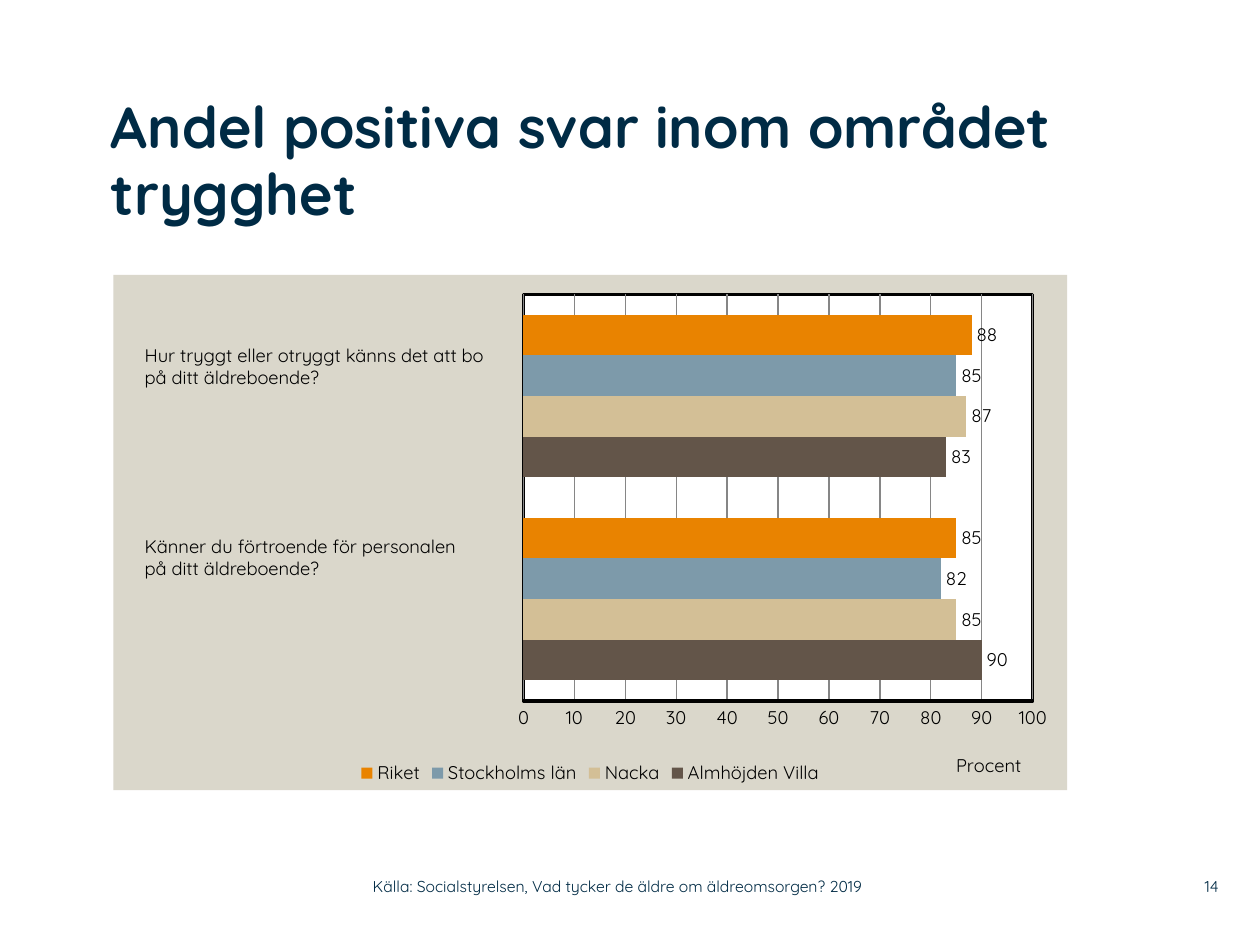
import pptx
import pptx.chart.data
import pptx.dml.color
import pptx.enum.chart
import pptx.enum.text
import pptx.util
from lxml import etree
from pptx.util import Pt

FONT = "Quicksand"
NAVY = "002B45"
BLACK = "000000"


def style_font(font, size, color, bold=False):
    font.name = FONT
    font.size = Pt(size)
    font.bold = bold
    font.color.rgb = pptx.dml.color.RGBColor.from_string(color)


def add_layout(parent, successors, **values):
    """Place a chart part by hand, in fractions of the chart area."""
    qn = pptx.oxml.ns.qn
    for old in parent.findall(qn("c:layout")):
        parent.remove(old)
    layout = etree.Element(qn("c:layout"))
    manual = etree.SubElement(layout, qn("c:manualLayout"))
    for name, value in values.items():
        etree.SubElement(manual, qn("c:" + name)).set("val", str(value))
    following = [child for child in parent if child.tag in [qn(s) for s in successors]]
    following[0].addprevious(layout)


presentation = pptx.Presentation()
presentation.slide_width = Pt(720)
presentation.slide_height = Pt(540)
slide = presentation.slides.add_slide(presentation.slide_layouts[5])
rgb = pptx.dml.color.RGBColor.from_string

# Title
title = slide.shapes.title
title.left, title.top, title.width, title.height = Pt(63.4), Pt(54), Pt(547), Pt(102)
frame = title.text_frame
frame.word_wrap = True
frame.auto_size = pptx.enum.text.MSO_AUTO_SIZE.NONE
frame.vertical_anchor = pptx.enum.text.MSO_ANCHOR.TOP
frame.margin_left = frame.margin_top = frame.margin_right = frame.margin_bottom = 0
paragraph = frame.paragraphs[0]
paragraph.alignment = pptx.enum.text.PP_ALIGN.LEFT
paragraph.line_spacing = 0.97
run = paragraph.add_run()
run.text = "Andel positiva svar inom området trygghet"
style_font(run.font, 33, NAVY, bold=True)

# Bar chart: one series per area, drawn from the bottom up
series_rows = [
    ("Almhöjden Villa", (90, 83), "635549"),
    ("Nacka", (85, 87), "D3BF96"),
    ("Stockholms län", (82, 85), "7D9AAA"),
    ("Riket", (85, 88), "E98300"),
]
chart_data = pptx.chart.data.CategoryChartData()
chart_data.categories = ["1", "2"]
for name, values, color in series_rows:
    chart_data.add_series(name, values)
chart = slide.shapes.add_chart(
    pptx.enum.chart.XL_CHART_TYPE.BAR_CLUSTERED,
    Pt(64.8), Pt(157), Pt(545), Pt(294.5), chart_data).chart
style_font(chart.font, 10.5, BLACK)
chart.has_title = False
chart.has_legend = True
chart.legend.position = pptx.enum.chart.XL_LEGEND_POSITION.BOTTOM
chart.legend.include_in_layout = False
style_font(chart.legend.font, 10.5, BLACK)

plot = chart.plots[0]
plot.gap_width = 100
plot.overlap = 0
plot.vary_by_categories = False
for series, (name, values, color) in zip(plot.series, series_rows):
    series.format.fill.solid()
    series.format.fill.fore_color.rgb = rgb(color)
    labels = series.data_labels
    labels.show_value = True
    labels.position = pptx.enum.chart.XL_LABEL_POSITION.OUTSIDE_END
    style_font(labels.font, 10.5, BLACK)

# Axes
chart.category_axis.visible = False
axis = chart.value_axis
axis.minimum_scale, axis.maximum_scale, axis.major_unit = 0, 100, 10
axis.major_tick_mark = pptx.enum.chart.XL_TICK_MARK.NONE
axis.has_major_gridlines = True
style_font(axis.tick_labels.font, 10.5, BLACK)
for line, color, width in ((axis.format.line, BLACK, 2),
                           (axis.major_gridlines.format.line, "868686", 0.75)):
    line.color.rgb = rgb(color)
    line.width = Pt(width)
run = axis.axis_title.text_frame.paragraphs[0].add_run()
run.text = "Procent"
style_font(run.font, 10.5, BLACK)
title_element = axis.axis_title._element
add_layout(title_element, ["c:overlay", "c:spPr"],
           xMode="edge", yMode="edge", x=0.88, y=0.92)

# Plot area position, chart and plot backgrounds
chart_space = chart._chartSpace
plot_area = chart_space.chart.plotArea
add_layout(plot_area, ["c:barChart"], layoutTarget="inner", xMode="edge",
           yMode="edge", x=0.43, y=0.038, w=0.534, h=0.789)
DRAWING = pptx.oxml.ns.nsdecls("c", "a")
chart_fill = pptx.oxml.parse_xml(
    f'<c:spPr {DRAWING}><a:solidFill><a:srgbClr val="DAD7CB"/></a:solidFill>'
    '<a:ln><a:noFill/></a:ln></c:spPr>')
chart_space.chart.addnext(chart_fill)
plot_area.append(pptx.oxml.parse_xml(
    f'<c:spPr {DRAWING}><a:solidFill><a:srgbClr val="FFFFFF"/></a:solidFill>'
    '<a:ln w="25400"><a:solidFill><a:srgbClr val="000000"/></a:solidFill></a:ln></c:spPr>'))

# Questions beside the bars, page number and source: box, lines, size, colour
left, right = pptx.enum.text.PP_ALIGN.LEFT, pptx.enum.text.PP_ALIGN.RIGHT
texts = [
    ((75.6, 193, 212, 32.4),
     ["Hur tryggt eller otryggt känns det att bo på ditt äldreboende?"], 10.5, BLACK, left),
    ((75.6, 302, 211, 32.4),
     ["Känner du förtroende för personalen", "på ditt äldreboende?"], 10.5, BLACK, left),
    ((662.4, 496, 34, 21), ["14"], 9, NAVY, right),
    ((213, 496, 319, 21),
     ["Källa: Socialstyrelsen, Vad tycker de äldre om äldreomsorgen? 2019"], 9, NAVY, left),
]
for box, lines, size, color, alignment in texts:
    frame = slide.shapes.add_textbox(*map(Pt, box)).text_frame
    frame.word_wrap = True
    if color == NAVY:
        frame.vertical_anchor = pptx.enum.text.MSO_ANCHOR.MIDDLE
        frame.margin_left = frame.margin_top = frame.margin_right = frame.margin_bottom = 0
    for index, text in enumerate(lines):
        paragraph = frame.paragraphs[0] if index == 0 else frame.add_paragraph()
        paragraph.alignment = alignment
        run = paragraph.add_run()
        run.text = text
        style_font(run.font, size, color)

presentation.save("out.pptx")
